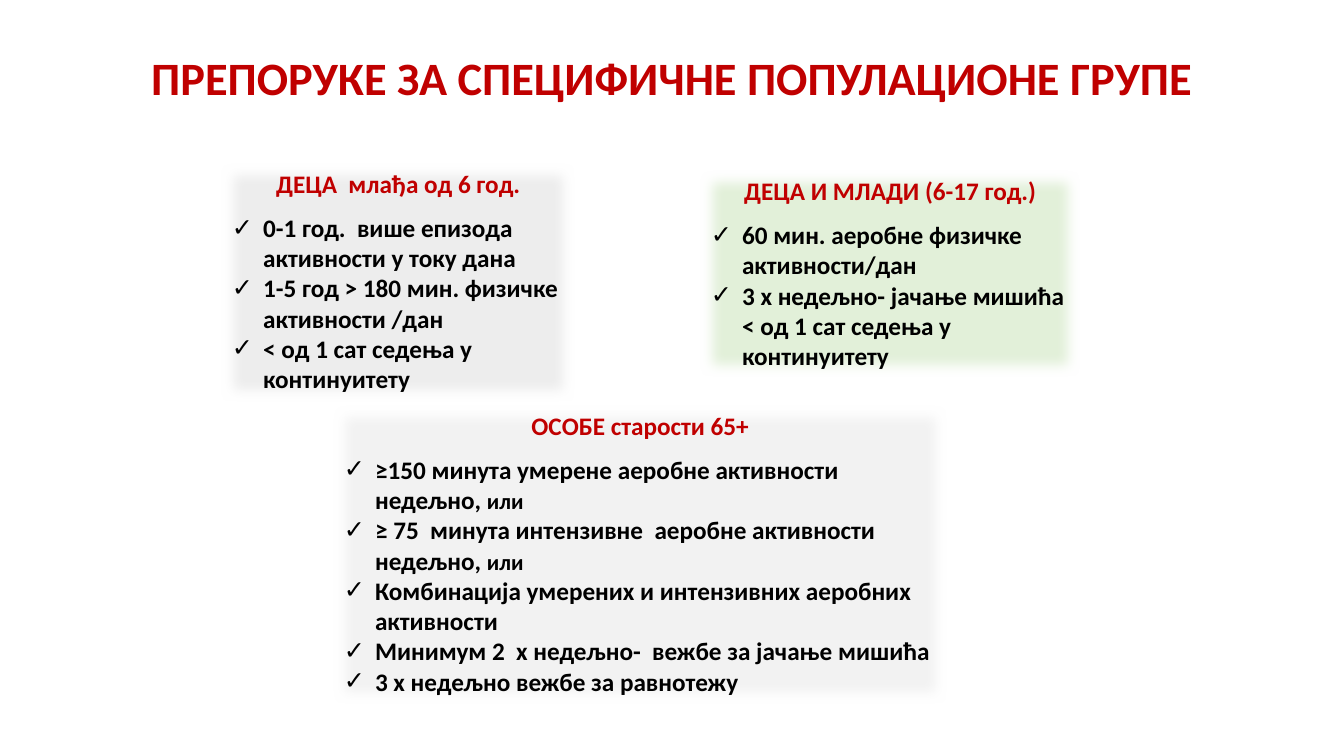
import dataclasses

import lxml.etree
import pptx
import pptx.dml.color
import pptx.enum.text
import pptx.oxml.ns
import pptx.util

Inches = pptx.util.Inches
Align = pptx.enum.text.PP_ALIGN
Anchor = pptx.enum.text.MSO_ANCHOR


@dataclasses.dataclass(frozen=True)
class Theme:
    font: str = "Calibri"
    accent: str = "C00000"
    ink: str = "000000"
    paper: str = "FFFFFF"
    title_size: float = 33.1
    text_size: float = 18
    minor_size: float = 16
    heading_gap: float = 9.8


THEME = Theme()

TITLE = ("ПРЕПОРУКЕ ЗА СПЕЦИФИЧНЕ ПОПУЛАЦИОНЕ ГРУПЕ", (1.4, 0.17, 10.56, 1.25))

GROUPS = [
    {
        "box": (2.2, 1.62, 3.5, 2.36),
        "fill": "EDEDED",
        "heading": "ДЕЦА  млађа од 6 год.",
        "advice": [
            ("0-1 год.  више епизода активности у току дана",),
            ("1-5 год > 180 мин. физичке активности /дан",),
            ("< од 1 сат седења у континуитету",),
        ],
    },
    {
        "box": (6.95, 1.69, 3.76, 2.05),
        "fill": "E2F0D9",
        "heading": "ДЕЦА И МЛАДИ (6-17 год.)",
        "advice": [
            ("60 мин. аеробне физичке активности/дан",),
            ("3 х недељно- јачање мишића < од 1 сат седења у континуитету",),
        ],
    },
    {
        "box": (3.31, 4.02, 6.08, 2.96),
        "fill": "F2F2F2",
        "heading": "ОСОБЕ старости 65+",
        "advice": [
            ("≥150 минута умерене аеробне активности недељно, ", "или"),
            ("≥ 75  минута интензивне  аеробне активности недељно, ", "или"),
            ("Комбинација умерених и интензивних аеробних активности",),
            ("Минимум 2  х недељно-  вежбе за јачање мишића",),
            ("3 х недељно вежбе за равнотежу",),
        ],
    },
]


def apply_format(target, values):
    for name, value in values.items():
        setattr(target, name, value)


def add_run(paragraph, text, size, color):
    run = paragraph.add_run()
    run.text = text
    apply_format(run.font, {"name": THEME.font, "size": pptx.util.Pt(size), "bold": True})
    run.font.color.rgb = pptx.dml.color.RGBColor.from_string(color)


def place(shape, box, fill, anchor):
    left, top, width, height = (Inches(length) for length in box)
    apply_format(shape, {"left": left, "top": top, "width": width, "height": height})
    shape.fill.solid()
    shape.fill.fore_color.rgb = pptx.dml.color.RGBColor.from_string(fill)
    apply_format(shape.text_frame, {
        "word_wrap": True,
        "auto_size": pptx.enum.text.MSO_AUTO_SIZE.NONE,
        "vertical_anchor": anchor,
    })


def add_child(parent, tag, **attributes):
    return lxml.etree.SubElement(parent, pptx.oxml.ns.qn(tag), attributes)


def soften_edges(shape):
    effects = add_child(shape.element.spPr, "a:effectLst")
    add_child(effects, "a:softEdge", rad="112500")


def set_bullet(paragraph, character=None):
    properties = paragraph._p.get_or_add_pPr()
    indent = Inches(0.31) if character else 0
    properties.set("marL", str(indent))
    properties.set("indent", str(-indent))
    if character:
        add_child(properties, "a:buFont", typeface=THEME.font)
        add_child(properties, "a:buChar", char=character)
    else:
        add_child(properties, "a:buNone")


def format_paragraph(paragraph, alignment, space_after=0, line_spacing=1.0):
    apply_format(paragraph, {
        "alignment": alignment,
        "line_spacing": line_spacing,
        "space_before": pptx.util.Pt(0),
        "space_after": pptx.util.Pt(space_after),
    })


def build_title(shape, text, box):
    place(shape, box, THEME.paper, Anchor.MIDDLE)
    paragraph = shape.text_frame.paragraphs[0]
    format_paragraph(paragraph, Align.LEFT, line_spacing=0.9)
    add_run(paragraph, text, THEME.title_size, THEME.accent)


def build_group(shape, box, fill, heading, advice):
    place(shape, box, fill, Anchor.TOP)
    soften_edges(shape)
    paragraph = shape.text_frame.paragraphs[0]
    set_bullet(paragraph)
    format_paragraph(paragraph, Align.CENTER, THEME.heading_gap)
    add_run(paragraph, heading, THEME.text_size, THEME.accent)
    for parts in advice:
        paragraph = shape.text_frame.add_paragraph()
        set_bullet(paragraph, "✓")
        format_paragraph(paragraph, Align.LEFT)
        for text, size in zip(parts, (THEME.text_size, THEME.minor_size)):
            add_run(paragraph, text, size, THEME.ink)


def main():
    presentation = pptx.Presentation()
    presentation.slide_width = Inches(13.33)
    presentation.slide_height = Inches(7.5)
    comparison_layout = presentation.slide_layouts[4]
    slide = presentation.slides.add_slide(comparison_layout)
    title, *bodies = list(slide.placeholders)
    build_title(title, *TITLE)
    for body, group in zip(bodies, GROUPS):
        build_group(body, **group)
    for unused in bodies[len(GROUPS):]:
        unused.element.getparent().remove(unused.element)
    presentation.save("out.pptx")


if __name__ == "__main__":
    main()
